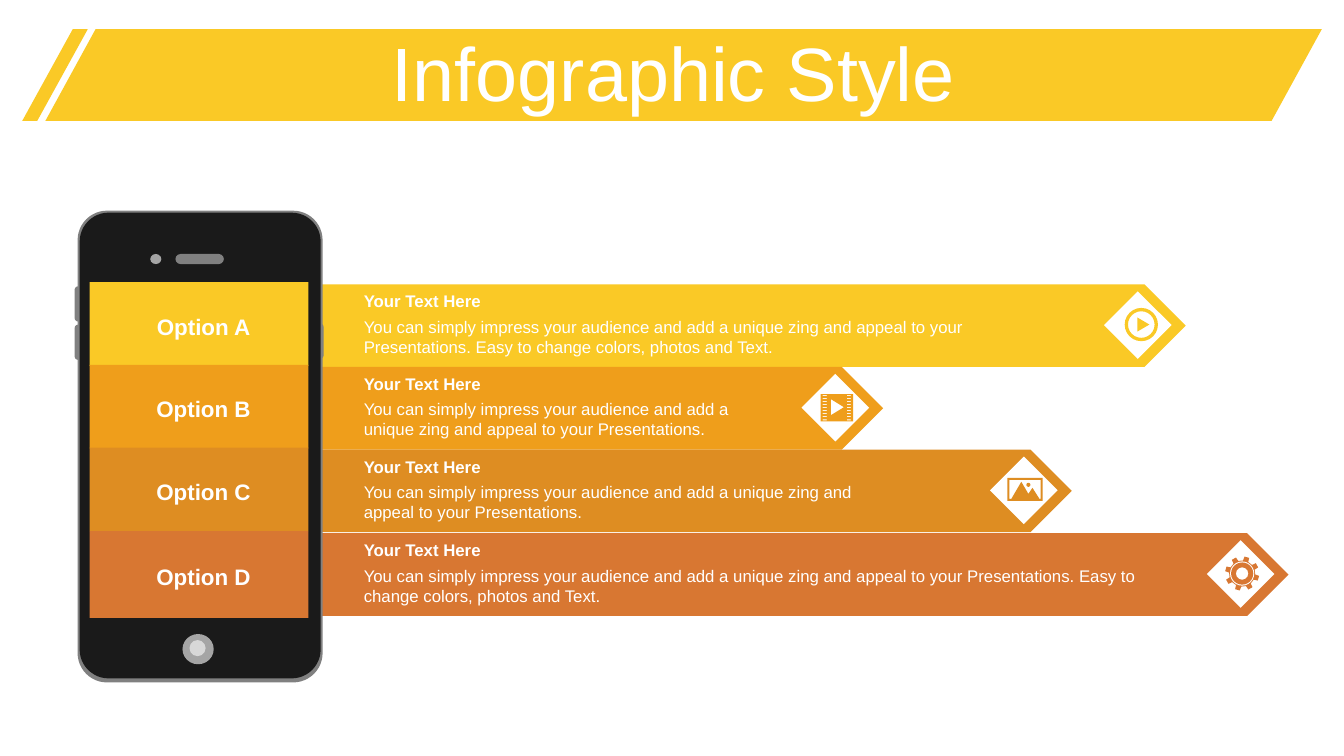
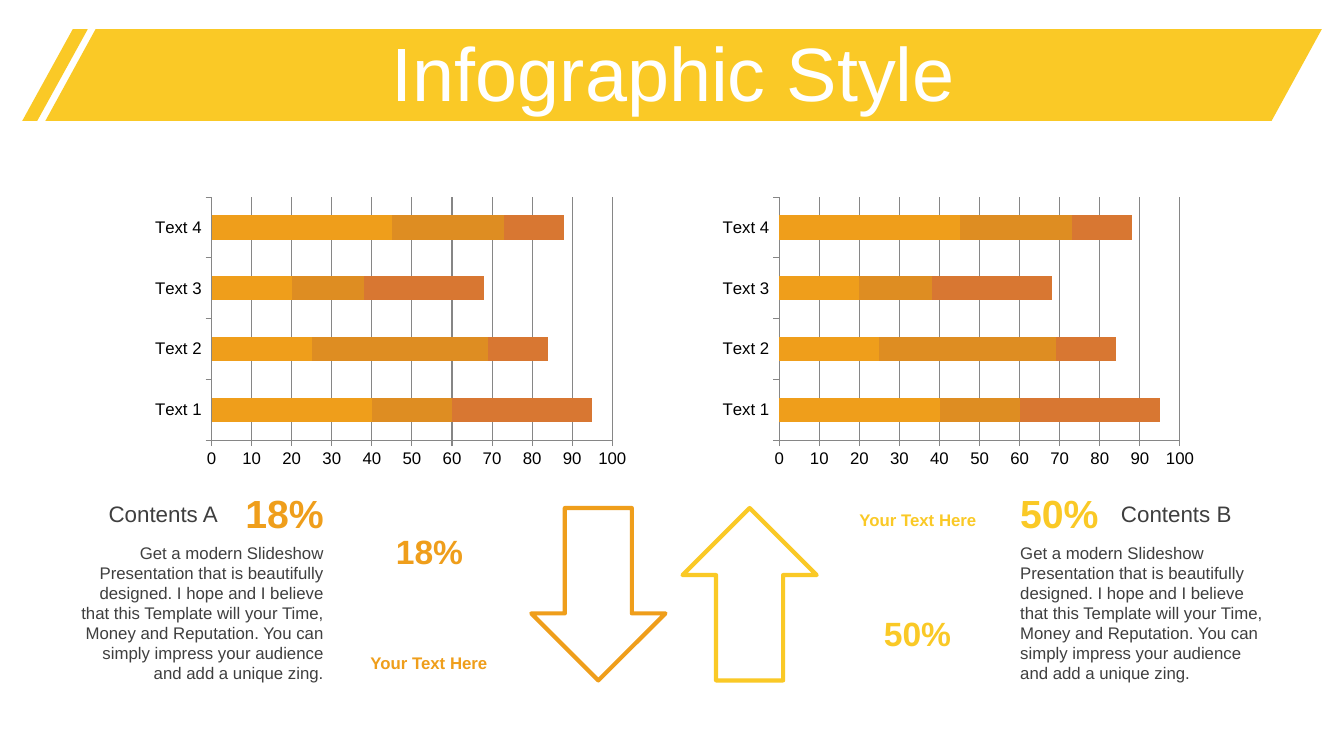
from functools import partial
from math import cos, radians, sin

from pptx import Presentation
from pptx import util as u
from pptx.chart.data import CategoryChartData
from pptx.dml.color import RGBColor
from pptx.enum import chart as charts, shapes, text

FONT = "Arial"
YELLOW, AMBER, OCHRE, RUST = "FAC926", "EF9E1B", "DE8D22", "D87732"
WHITE, BLACK, DARK = "FFFFFF", "000000", "3F3F3F"
PHONE, FRAME, SILVER, PALE = "1A1A1A", "808080", "A5A5A5", "D8D8D8"
GRID = "868686"
LEFT, CENTER, RIGHT = text.PP_ALIGN.LEFT, text.PP_ALIGN.CENTER, text.PP_ALIGN.RIGHT
TOP, MIDDLE = text.MSO_ANCHOR.TOP, text.MSO_ANCHOR.MIDDLE
SHAPE = shapes.MSO_SHAPE

SHORT = "You can simply impress your audience and add a unique zing and appeal to your Presentations."
LONG = SHORT + " Easy to change colors, photos and Text."
PITCH = (
    "Get a modern Slideshow Presentation that is beautifully designed. "
    "I hope and I believe that this Template will your Time, Money and Reputation. "
    "You can simply impress your audience and add a unique zing."
)


def rgb(color):
    """Turn a hex string into a colour."""
    return RGBColor.from_string(color)


def paint(item, fill=None, line=None, weight=3):
    """Give a shape a flat fill and outline without shadow."""
    item.shadow.inherit = False
    if fill:
        item.fill.solid()
        item.fill.fore_color.rgb = rgb(fill)
    else:
        item.fill.background()
    if line:
        item.line.color.rgb = rgb(line)
        item.line.width = u.Pt(weight)
    else:
        item.line.fill.background()


def add_preset(slide, kind, at, fill=None, adj=(), line=None):
    """Add a preset shape at left, top, width, height."""
    item = slide.shapes.add_shape(kind, *map(u.Inches, at))
    for index, value in enumerate(adj):
        item.adjustments[index] = value
    paint(item, fill, line)
    return item


def add_outline(slide, contours, fill):
    """Add one closed shape whose inner contours are holes."""
    scaled = [[(u.Inches(x), u.Inches(y)) for x, y in points] for points in contours]
    builder = slide.shapes.build_freeform(*scaled[0][0], scale=1.0)
    for index, (start, *rest) in enumerate(scaled):
        if index:
            builder.move_to(*start)
        builder.add_line_segments(rest, close=True)
    paint(builder.convert_to_shape(), fill)


def write(item, words, size, color, bold=False, align=LEFT, anchor=TOP,
          insets=(0.1, 0.05, 0.1, 0.05)):
    """Set one formatted paragraph in a shape."""
    frame = item.text_frame
    frame.word_wrap = True
    frame.auto_size = text.MSO_AUTO_SIZE.NONE
    frame.vertical_anchor = anchor
    (frame.margin_left, frame.margin_top,
     frame.margin_right, frame.margin_bottom) = map(u.Inches, insets)
    paragraph = frame.paragraphs[0]
    paragraph.alignment = align
    run = paragraph.add_run()
    run.text = words
    run.font.name, run.font.size, run.font.bold = FONT, u.Pt(size), bold
    run.font.color.rgb = rgb(color)
    return paragraph


def add_text(slide, at, words, size, color, **style):
    """Add a text box at left, top, width, height."""
    write(slide.shapes.add_textbox(*map(u.Inches, at)), words, size, color, **style)


def add_titled_slide(deck, title):
    """Add a slide with the slanted title band."""
    slide = deck.slides.add_slide(deck.slide_layouts[5])
    for at, slant in (((0.45, 0.29, 12.66, 0.91), 0.547), ((0.22, 0.29, 0.65, 0.91), 0.771)):
        add_preset(slide, SHAPE.PARALLELOGRAM, at, YELLOW, [slant])
    heading = slide.shapes.title
    heading.left, heading.top, heading.width, heading.height = map(
        u.Inches, (0.35, 0.37, 12.66, 0.79))
    write(heading, title, 54, WHITE, align=CENTER, anchor=MIDDLE).line_spacing = 0.9
    slide.shapes._spTree.append(heading._element)
    return slide


def box(x, y, width, height):
    """Return the corners of a rectangle."""
    return [(x, y), (x + width, y), (x + width, y + height), (x, y + height)]


def square(x, y, radius):
    """Return the bounds of a circle around a centre."""
    return x - radius, y - radius, 2 * radius, 2 * radius


def draw_play(slide, x, y, color):
    """Draw a ringed play symbol."""
    add_preset(slide, SHAPE.DONUT, square(x + 0.02, y, 0.165), color, [0.1])
    add_outline(slide, [[(x - 0.02, y - 0.07), (x + 0.1, y), (x - 0.02, y + 0.07)]], color)


def draw_film(slide, x, y, color):
    """Draw a film frame with perforated edges."""
    holes = [box(x + side, y - 0.12 + 0.03 * row, 0.04, 0.01)
             for side in (-0.14, 0.1) for row in range(9)]
    arrow = [(x - 0.06, y - 0.08), (x - 0.06, y + 0.08), (x + 0.07, y)]
    add_outline(slide, [box(x - 0.16, y - 0.13, 0.32, 0.27), arrow] + holes, color)


def draw_photo(slide, x, y, color):
    """Draw a framed mountain view."""
    add_outline(slide, [box(x - 0.18, y - 0.12, 0.35, 0.23),
                        box(x - 0.16, y - 0.1, 0.31, 0.19)], color)
    peaks = [(-0.14, 0.09), (-0.04, -0.08), (0.03, 0.04), (0.07, -0.02), (0.14, 0.09)]
    add_outline(slide, [[(x + dx, y + dy) for dx, dy in peaks]], color)
    add_preset(slide, SHAPE.OVAL, square(x + 0.03, y - 0.05, 0.02), color)


def draw_gear(slide, x, y, color):
    """Draw a gear with eight teeth and a ring."""
    tooth = ((-12, 0.13), (-8, 0.17), (8, 0.17), (12, 0.13))
    rim = [(x + radius * cos(radians(turn + step)), y + radius * sin(radians(turn + step)))
           for turn in range(-29, 331, 45) for step, radius in tooth]
    add_outline(slide, [rim], color)
    add_preset(slide, SHAPE.OVAL, square(x, y, 0.12), WHITE)
    add_preset(slide, SHAPE.DONUT, square(x, y, 0.11), color, [0.22])


def draw_phone(slide):
    """Draw the phone body with its buttons, camera and speaker."""
    parts = (
        (SHAPE.ROUNDED_RECTANGLE, (0.74, 2.84, 0.07, 0.35), FRAME, [0.5]),
        (SHAPE.ROUNDED_RECTANGLE, (0.74, 3.22, 0.07, 0.35), FRAME, [0.5]),
        (SHAPE.ROUNDED_RECTANGLE, (3.14, 3.21, 0.07, 0.35), FRAME, [0.5]),
        (SHAPE.ROUNDED_RECTANGLE, (0.77, 2.09, 2.43, 4.68), FRAME, [0.12]),
        (SHAPE.ROUNDED_RECTANGLE, (0.79, 2.11, 2.39, 4.62), PHONE, [0.12]),
        (SHAPE.OVAL, (1.81, 6.29, 0.31, 0.3), SILVER, []),
        (SHAPE.OVAL, (1.88, 6.35, 0.16, 0.16), PALE, []),
        (SHAPE.ROUNDED_RECTANGLE, (1.74, 2.52, 0.48, 0.1), FRAME, [0.5]),
        (SHAPE.OVAL, (1.49, 2.52, 0.11, 0.1), SILVER, []),
    )
    for part in parts:
        add_preset(slide, *part)


def add_options(slide):
    """Add the phone and the four option bars that leave it."""
    options = (
        ("Option A", YELLOW, 11.76, 6.31, LONG, draw_play),
        ("Option B", AMBER, 8.76, 3.83, SHORT, draw_film),
        ("Option C", OCHRE, 10.63, 5.07, SHORT, draw_photo),
        ("Option D", RUST, 12.78, 7.9, LONG, draw_gear),
    )
    start, first, pitch = 3.18, 2.82, 0.82
    rows = [(first + pitch * index + 0.01 * (index == 3), *option)
            for index, option in enumerate(options)]
    for top, _, color, tip, *_ in rows:
        add_preset(slide, SHAPE.PENTAGON, (start, top, tip - start, pitch), color, [0.5])
    draw_phone(slide)
    for top, label, color, tip, width, body, draw_icon in rows:
        height = 0.86 if label == "Option D" else 0.83
        tile = add_preset(slide, SHAPE.RECTANGLE, (0.89, top - 0.02, 2.17, height), color)
        write(tile, label, 16, WHITE, bold=True, align=CENTER, anchor=MIDDLE,
              insets=(0.1, 0.04, 0.01, 0))
        add_preset(slide, SHAPE.DIAMOND, (tip - 0.81, top + 0.07, 0.67, 0.67), WHITE)
        draw_icon(slide, tip - 0.46, top + 0.4, color)
        add_text(slide, (3.51, top + 0.02, width, 0.3), "Your Text Here", 12, WHITE, bold=True)
        add_text(slide, (3.51, top + 0.27, width, 0.5), body, 12, WHITE)


def add_stacked_chart(slide, left):
    """Add a stacked bar chart of the four texts."""
    data = CategoryChartData()
    data.categories = [f"Text {number}" for number in range(1, 5)]
    series = (((40, 25, 20, 45), AMBER), ((20, 44, 18, 28), OCHRE), ((35, 15, 30, 15), RUST))
    for number, (values, _) in enumerate(series, 1):
        data.add_series(f"Series {number}", values)
    chart = slide.shapes.add_chart(
        charts.XL_CHART_TYPE.BAR_STACKED,
        *map(u.Inches, (left, 1.9, 4.87, 2.8)), data).chart
    chart.has_legend = chart.has_title = False
    chart.font.name, chart.font.size = FONT, u.Pt(12)
    chart.font.color.rgb = rgb(BLACK)
    plot = chart.plots[0]
    plot.gap_width, plot.overlap, plot.vary_by_categories = 150, 100, False
    for bars, (_, color) in zip(plot.series, series):
        bars.format.fill.solid()
        bars.format.fill.fore_color.rgb = rgb(color)
    for axis in (chart.category_axis, chart.value_axis):
        axis.major_tick_mark = charts.XL_TICK_MARK.OUTSIDE
        axis.format.line.color.rgb = rgb(GRID)
    scale = chart.value_axis
    scale.minimum_scale, scale.maximum_scale, scale.major_unit = 0, 100, 10
    scale.has_major_gridlines = True
    scale.major_gridlines.format.line.color.rgb = rgb(GRID)


def add_contents(slide, column, figure_left, name_left, name, share, color, align):
    """Add a heading, its share and a paragraph."""
    put = partial(add_text, slide, align=align)
    put((figure_left, 4.84, 1, 0.5), share, 28, color, bold=True, anchor=MIDDLE)
    put((name_left, 4.91, 1.63, 0.37), name, 16, DARK, anchor=MIDDLE)
    put((column, 5.33, 2.68, 1.51), PITCH, 12, DARK)


def add_trend(slide, kind, arrow_left, share_at, caption_at, share, color):
    """Add an outlined arrow with its share and caption."""
    add_preset(slide, kind, (arrow_left, 5.04, 1.33, 1.71), adj=[0.5, 0.5], line=color)
    put = partial(add_text, slide, color=color, bold=True, align=CENTER)
    put((*share_at, 1.02, 0.5), share, 24, anchor=MIDDLE)
    put((*caption_at, 1.67, 0.3), "Your Text Here", 12)


def main():
    """Build and save the two slides."""
    deck = Presentation()
    deck.slide_width, deck.slide_height = u.Inches(13.33), u.Inches(7.5)

    add_options(add_titled_slide(deck, "Infographic Style"))

    comparison = add_titled_slide(deck, "Infographic Style")
    for left in (1.44, 7.07):
        add_stacked_chart(comparison, left)
    add_trend(comparison, SHAPE.DOWN_ARROW, 5.27, (3.75, 5.22), (3.42, 6.43), "18%", AMBER)
    add_trend(comparison, SHAPE.UP_ARROW, 6.77, (8.59, 6.03), (8.27, 5.01), "50%", YELLOW)
    add_contents(comparison, 0.63, 2.31, 0.63, "Contents A", "18%", AMBER, RIGHT)
    add_contents(comparison, 10.02, 10.02, 11.02, "Contents B", "50%", YELLOW, LEFT)

    deck.save("out.pptx")


if __name__ == "__main__":
    main()
